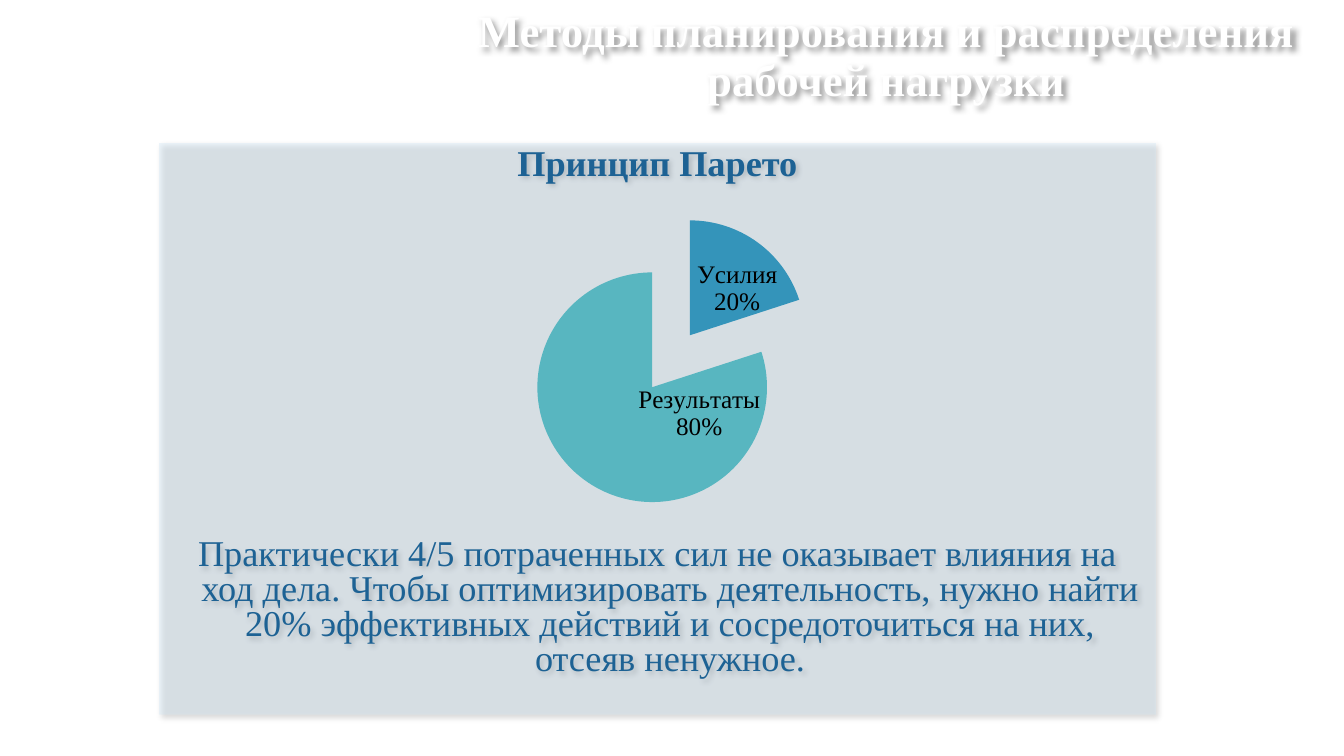
from dataclasses import dataclass

from lxml import etree
from pptx import Presentation
from pptx.chart.data import CategoryChartData
from pptx.dml.color import RGBColor
from pptx.enum.chart import XL_CHART_TYPE, XL_LABEL_POSITION
from pptx.enum.shapes import MSO_SHAPE
from pptx.enum.text import MSO_ANCHOR, PP_ALIGN
from pptx.oxml import parse_xml
from pptx.oxml.ns import nsdecls, qn
from pptx.util import Cm, Pt

PIE = XL_CHART_TYPE.PIE
LABEL_CENTER = XL_LABEL_POSITION.CENTER
RECT = MSO_SHAPE.RECTANGLE
TOP, MIDDLE = MSO_ANCHOR.TOP, MSO_ANCHOR.MIDDLE
CENTER = PP_ALIGN.CENTER
FONT = "Times New Roman"
WHITE, BLACK, BLUE, PANEL = "FFFFFF", "000000", "1D6294", "D1E7F6"


@dataclass
class Slice:
    name: str
    value: int
    color: str
    label_dx: float
    label_dy: float


SLICES = [
    Slice("Усилия", 20, "3494BA", 0.02, 0),
    Slice("Результаты", 80, "58B6C0", 0.12, -0.05),
]


def rgb(color: str) -> RGBColor:
    return RGBColor.from_string(color)


def set_shadow(sp) -> None:
    sp.shadow.inherit = False
    effects = sp._element.spPr.find(qn("a:effectLst"))
    effects.append(parse_xml(
        f'<a:outerShdw {nsdecls("a")} blurRad="50800" dist="38100" dir="2700000" '
        'algn="tl" rotWithShape="0"><a:srgbClr val="000000"><a:alpha val="40000"/>'
        '</a:srgbClr></a:outerShdw>'))


def write(p, text: str, *, size: float, color: str, bold: bool = False,
          spacing: float = 1.0, before: float = 0, hanging: float = 0) -> None:
    p.alignment = CENTER
    p.line_spacing = spacing
    p.space_before = Pt(before)
    if hanging:
        pPr = p._p.get_or_add_pPr()
        pPr.set("marL", str(Cm(hanging)))
        pPr.set("indent", str(-Cm(hanging)))
    r = p.add_run()
    r.text = text
    r.font.name = FONT
    r.font.size = Pt(size)
    r.font.bold = bold
    r.font.color.rgb = rgb(color)


def add_title(slide) -> None:
    sp = slide.shapes.title
    sp.left, sp.top, sp.width, sp.height = Cm(11.23), Cm(0), Cm(22.2), Cm(2.9)
    set_shadow(sp)
    tf = sp.text_frame
    tf.word_wrap = True
    tf.vertical_anchor = MIDDLE
    write(tf.paragraphs[0], "Методы планирования и распределения рабочей нагрузки",
          size=32, color=WHITE, bold=True, spacing=0.9)


def add_panel(slide) -> None:
    sp = slide.shapes.add_shape(RECT, Cm(4.01), Cm(3.61), Cm(25.12), Cm(14.4))
    sp.fill.solid()
    sp.fill.fore_color.rgb = rgb(PANEL)
    color = sp._element.spPr.find(".//" + qn("a:srgbClr"))
    etree.SubElement(color, qn("a:alpha")).set("val", "37000")
    sp.line.fill.background()
    set_shadow(sp)
    tf = sp.text_frame
    tf.word_wrap = True
    tf.vertical_anchor = TOP
    write(tf.paragraphs[0], "Принцип Парето", size=25.9, color=BLUE, bold=True,
          spacing=0.8, hanging=0.64)
    write(tf.add_paragraph(),
          "Практически 4/5 потраченных сил не оказывает влияния на ход дела. "
          "Чтобы оптимизировать деятельность, нужно найти 20% эффективных действий "
          "и сосредоточиться на них, отсеяв ненужное.",
          size=25.9, color=BLUE, spacing=0.8, before=254, hanging=0.64)


def label_point(point, part: Slice) -> None:
    """Write name and percent on a slice, shifted from the slice centre."""
    label = point.data_label
    tf = label.text_frame
    tf.word_wrap = False
    write(tf.paragraphs[0], part.name, size=18, color=BLACK)
    write(tf.add_paragraph(), f"{part.value}%", size=18, color=BLACK)
    label.position = LABEL_CENTER
    dLbl = tf._txBody.getparent().getparent()
    for old in dLbl.findall(qn("c:layout")):
        dLbl.remove(old)
    dLbl.find(qn("c:idx")).addnext(parse_xml(
        f'<c:layout {nsdecls("c")}><c:manualLayout><c:x val="{part.label_dx}"/>'
        f'<c:y val="{part.label_dy}"/></c:manualLayout></c:layout>'))
    for tag, shown in (("c:showVal", "0"), ("c:showCatName", "1"), ("c:showPercent", "1")):
        dLbl.find(qn(tag)).set("val", shown)


def add_pie(slide) -> None:
    data = CategoryChartData()
    data.categories = [part.name for part in SLICES]
    data.add_series("Series 1", [part.value for part in SLICES])
    chart = slide.shapes.add_chart(
        PIE, Cm(7.92), Cm(3.96), Cm(16.97), Cm(10.29), data).chart
    chart.has_title = False
    chart.has_legend = False
    chart.font.name = FONT
    chart.font.size = Pt(18)
    chart.font.color.rgb = rgb(BLACK)

    plot = chart.plots[0]
    plot.vary_by_categories = True
    series = plot.series[0]
    labels = series.data_labels
    labels.show_value = False
    labels.show_category_name = True
    labels.show_percentage = True
    for i, part in enumerate(SLICES):
        point = series.points[i]
        point.format.fill.solid()
        point.format.fill.fore_color.rgb = rgb(part.color)
        label_point(point, part)

    explosion = parse_xml(f'<c:explosion {nsdecls("c")} val="28"/>')
    series._element.find(qn("c:dPt")).addprevious(explosion)

    area = chart._chartSpace.find(".//" + qn("c:plotArea"))
    for old in area.findall(qn("c:layout")):
        area.remove(old)
    area.insert(0, parse_xml(
        f'<c:layout {nsdecls("c")}><c:manualLayout><c:layoutTarget val="inner"/>'
        '<c:xMode val="edge"/><c:yMode val="edge"/><c:x val="0.31"/><c:y val="0.14"/>'
        '<c:w val="0.44"/><c:h val="0.72"/></c:manualLayout></c:layout>'))


def main() -> None:
    prs = Presentation()
    prs.slide_width, prs.slide_height = Cm(33.87), Cm(19.05)
    slide = prs.slides.add_slide(prs.slide_layouts[5])
    add_title(slide)
    add_panel(slide)
    add_pie(slide)
    prs.save("out.pptx")


if __name__ == "__main__":
    main()
